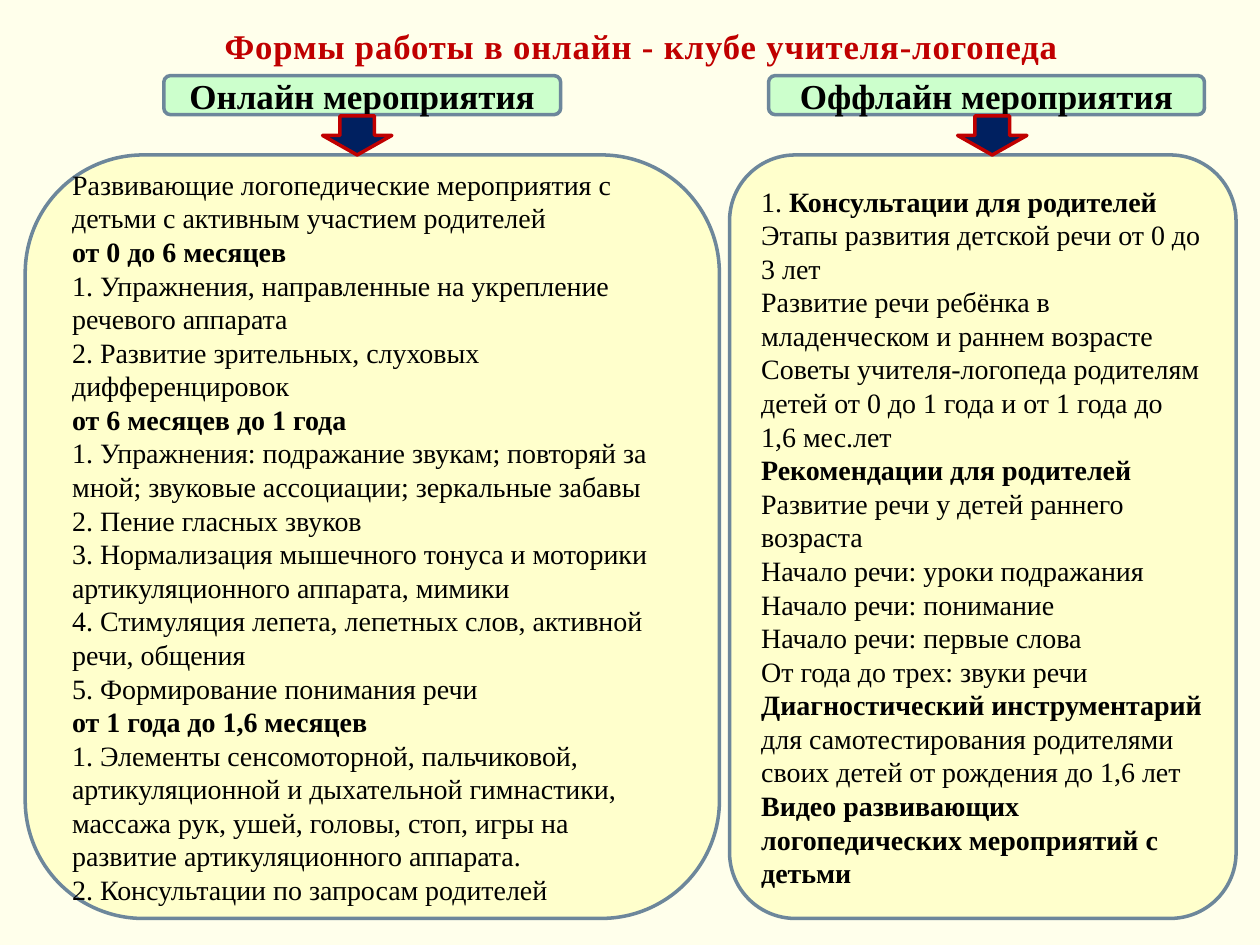
from dataclasses import dataclass

from pptx import Presentation
from pptx.dml.color import RGBColor as Rgb
from pptx.enum.shapes import MSO_SHAPE as Kind
from pptx.enum.text import MSO_ANCHOR as Anchor, PP_ALIGN as Align
from pptx.util import Inches, Pt


@dataclass(frozen=True)
class Theme:
    """Colours, font and type sizes of the slide."""
    font: str = "Times New Roman"
    page: str = "FFFFEB"
    head: str = "CCFFCC"
    panel: str = "FFFFCC"
    edge: str = "6D879B"
    navy: str = "002060"
    red: str = "C00000"
    ink: str = "000000"
    title: float = 19.8
    label: float = 20
    body: float = 16


THEME = Theme()
TITLE = "Формы работы в онлайн - клубе учителя-логопеда"
ONLINE = [
    "Развивающие логопедические мероприятия с детьми с активным участием родителей",
    "*от 0 до 6 месяцев",
    "1. Упражнения, направленные на укрепление речевого аппарата",
    "2. Развитие зрительных, слуховых дифференцировок",
    "*от 6 месяцев до 1 года",
    "1. Упражнения: подражание звукам; повторяй за мной; звуковые ассоциации; зеркальные забавы",
    "2. Пение гласных звуков",
    "3. Нормализация мышечного тонуса и моторики артикуляционного аппарата, мимики",
    "4. Стимуляция лепета, лепетных слов, активной речи, общения",
    "5. Формирование понимания речи",
    "*от 1 года до 1,6 месяцев",
    "1. Элементы сенсомоторной, пальчиковой, артикуляционной и дыхательной гимнастики, "
    "массажа рук, ушей, головы, стоп, игры на развитие артикуляционного аппарата.",
    "2. Консультации по запросам родителей",
]
OFFLINE = [
    "1. *Консультации для родителей",
    "Этапы развития детской речи от 0 до 3 лет",
    "Развитие речи ребёнка в младенческом и раннем возрасте",
    "Советы учителя-логопеда родителям детей от 0 до 1 года и от 1 года до 1,6 мес.лет",
    "*Рекомендации для родителей",
    "Развитие речи у детей раннего возраста",
    "Начало речи: уроки подражания",
    "Начало речи: понимание",
    "Начало речи: первые слова",
    "От года до трех: звуки речи",
    "*Диагностический инструментарий *для самотестирования родителями "
    "своих детей от рождения до 1,6 лет",
    "*Видео развивающих логопедических мероприятий с детьми",
]


def write(shape, lines, size, color=THEME.ink, align=Align.LEFT, space=0):
    """Fill a shape with paragraphs, where each star switches bold on or off."""
    frame = shape.text_frame
    frame.word_wrap = True
    frame.vertical_anchor = Anchor.MIDDLE
    for i, line in enumerate(lines):
        para = frame.add_paragraph() if i else frame.paragraphs[0]
        para.alignment = align
        for j, part in enumerate(line.split("*")):
            if not part:
                continue
            run = para.add_run()
            run.text = part
            font = run.font
            font.name, font.size, font.bold = THEME.font, Pt(size), j % 2 == 1
            font.color.rgb = Rgb.from_string(color)
            if space:
                font._element.set("spc", str(int(space * 100)))


def draw(slide, kind, box, fill, edge=THEME.edge):
    """Add a filled and outlined preset shape."""
    shape = slide.shapes.add_shape(kind, *map(Inches, box))
    shape.shadow.inherit = False
    shape.fill.solid()
    shape.fill.fore_color.rgb = Rgb.from_string(fill)
    shape.line.color.rgb = Rgb.from_string(edge)
    shape.line.width = Pt(2)
    return shape


def column(slide, label, lines, head, panel, arrow, curve):
    """Add a label and a text panel, given as left and width, and an arrow."""
    top = draw(slide, Kind.ROUNDED_RECTANGLE, (head[0], 0.6, head[1], 0.31), THEME.head)
    write(top, ["*" + label], THEME.label, align=Align.CENTER)
    body = draw(slide, Kind.ROUNDED_RECTANGLE, (panel[0], 1.23, panel[1], 6.06), THEME.panel)
    body.adjustments[0] = curve
    write(body, lines, THEME.body)
    draw(slide, Kind.DOWN_ARROW, (arrow, 0.92, 0.55, 0.31), THEME.navy, THEME.red)


def main():
    """Build and save the slide."""
    deck = Presentation()
    deck.slide_width, deck.slide_height = Inches(10), Inches(7.5)
    slide = deck.slides.add_slide(deck.slide_layouts[6])
    slide.background.fill.solid()
    slide.background.fill.fore_color.rgb = Rgb.from_string(THEME.page)
    title = slide.shapes.add_textbox(*map(Inches, (0.59, 0.16, 9, 0.4)))
    write(title, ["*" + TITLE], THEME.title, THEME.red, Align.CENTER, space=0.5)
    column(slide, "Онлайн мероприятия", ONLINE, (1.3, 3.15), (0.2, 5.51), 2.56, 0.17)
    column(slide, "Оффлайн мероприятия", OFFLINE, (6.1, 3.46), (5.79, 4.02), 7.6, 0.13)
    deck.save("out.pptx")


if __name__ == "__main__":
    main()
